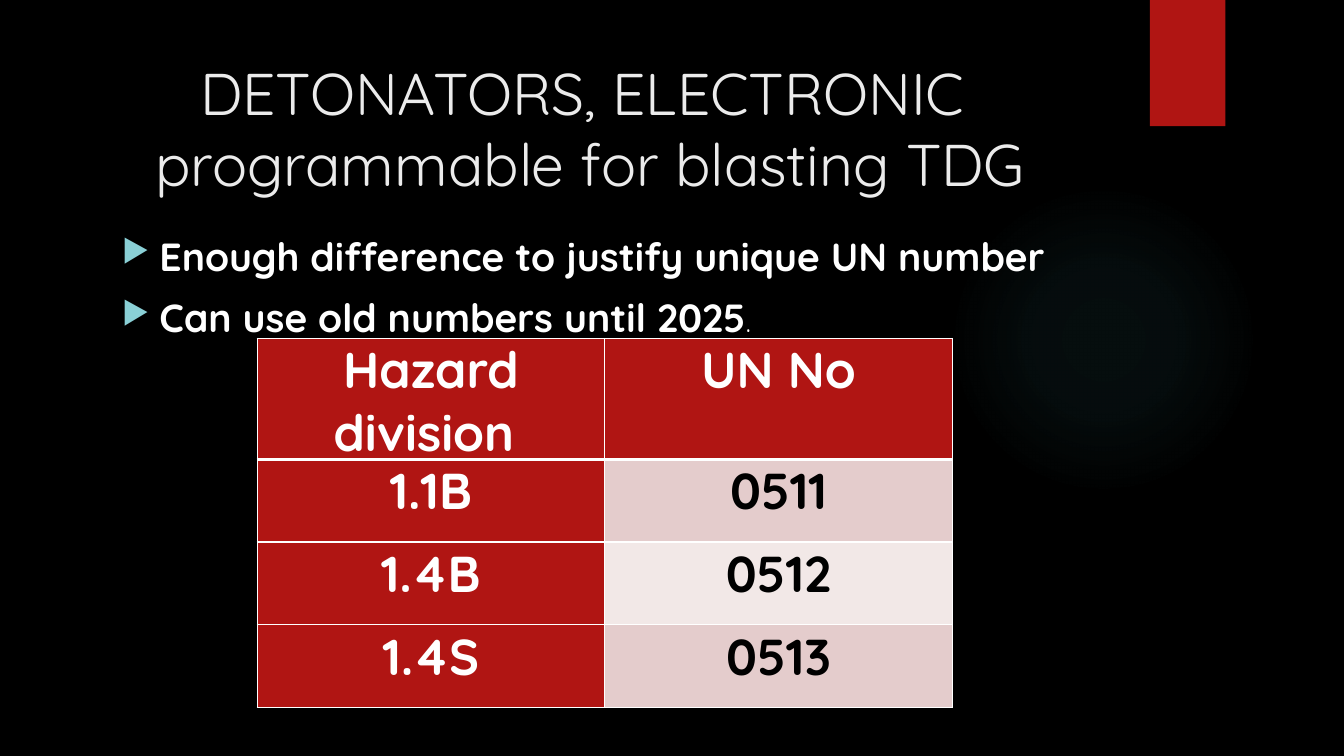
"""Build the slide on UN numbers for electronic detonators."""
from dataclasses import dataclass
from typing import NamedTuple

from lxml import etree
from pptx import Presentation
from pptx.dml.color import RGBColor
from pptx.enum.shapes import MSO_SHAPE
from pptx.enum.text import MSO_ANCHOR, PP_ALIGN
from pptx.util import Cm, Pt

OVAL, RECT = MSO_SHAPE.OVAL, MSO_SHAPE.RECTANGLE
LEFT, CENTER = PP_ALIGN.LEFT, PP_ALIGN.CENTER
TOP, MIDDLE = MSO_ANCHOR.TOP, MSO_ANCHOR.MIDDLE
NS = "http://schemas.openxmlformats.org/drawingml/2006/main"


@dataclass(frozen=True)
class Theme:
    font: str = "Quicksand"
    black: str = "000000"
    white: str = "FFFFFF"
    pale: str = "EBEBEB"
    red: str = "B01513"
    teal: str = "50B9C1"
    mark: str = "8AD0D6"
    bands: tuple = ("E4CCCC", "F2E8E7")
    title: int = 42
    cell: int = 36
    body: int = 28
    small: int = 20


THEME = Theme()


class Box(NamedTuple):
    left: float
    top: float
    width: float
    height: float

    def place(self) -> list:
        return [Cm(value) for value in self]


class Piece(NamedTuple):
    text: str
    size: int
    color: str = THEME.white
    bold: bool = True


class Stop(NamedTuple):
    place: int
    alpha: int


GLOW = (Stop(0, 7), Stop(36, 6), Stop(69, 0))
TITLE = ("DETONATORS, ELECTRONIC ", "programmable for blasting TDG")
POINTS = (
    (Piece("Enough difference to justify unique UN number", THEME.body),),
    (Piece("Can use old numbers until 2025", THEME.body),
     Piece(".", THEME.small, bold=False)),
)
ROWS = (("Hazard division ", "UN No"), ("1.1B", "0511"),
        ("1.4B", "0512"), ("1.4S", "0513"))


def add_xml(parent, text: str) -> None:
    parent.append(etree.fromstring(text.replace(" ", f' xmlns:a="{NS}" ', 1)))


def paint(fill, color: str) -> None:
    fill.solid()
    fill.fore_color.rgb = RGBColor.from_string(color)


def add_run(para, piece: Piece) -> None:
    run = para.add_run()
    run.text = piece.text
    font = run.font
    font.name, font.size, font.bold = THEME.font, Pt(piece.size), piece.bold
    font.color.rgb = RGBColor.from_string(piece.color)


def add_shape(slide, kind, box: Box, color: str):
    shape = slide.shapes.add_shape(kind, *box.place())
    shape.shadow.inherit = False
    shape.line.fill.background()
    paint(shape.fill, color)
    return shape


def add_glow(slide, box: Box) -> None:
    shape = add_shape(slide, OVAL, box, THEME.teal)
    stops = "".join(
        f'<a:gs pos="{stop.place * 1000}"><a:srgbClr val="{THEME.teal}">'
        f'<a:alpha val="{stop.alpha * 1000}"/></a:srgbClr></a:gs>'
        for stop in GLOW)
    solid = shape.fill._xPr.find(f"{{{NS}}}solidFill")
    solid.getparent().replace(solid, etree.fromstring(
        f'<a:gradFill xmlns:a="{NS}" rotWithShape="1"><a:gsLst>{stops}</a:gsLst>'
        '<a:path path="circle"><a:fillToRect l="50000" t="50000" r="50000" '
        'b="50000"/></a:path></a:gradFill>'))


def add_frame(slide, box: Box, anchor):
    frame = slide.shapes.add_textbox(*box.place()).text_frame
    frame.word_wrap = True
    frame.vertical_anchor = anchor
    return frame


def add_title(slide, box: Box) -> None:
    para = add_frame(slide, box, MIDDLE).paragraphs[0]
    para.alignment = CENTER
    for index, line in enumerate(TITLE):
        if index:
            para.add_line_break()
        add_run(para, Piece(line, THEME.title, THEME.pale, False))


def add_points(slide, box: Box) -> None:
    frame = add_frame(slide, box, TOP)
    for index, point in enumerate(POINTS):
        para = frame.add_paragraph() if index else frame.paragraphs[0]
        props = para._p.get_or_add_pPr()
        props.set("marL", str(Cm(0.95)))
        props.set("indent", str(-Cm(0.95)))
        add_xml(props, f'<a:buClr ><a:srgbClr val="{THEME.mark}"/></a:buClr>')
        add_xml(props, '<a:buSzPct val="80000"/>')
        add_xml(props, '<a:buChar char="▶"/>')
        para.alignment = LEFT
        para.space_before = Pt(10 if index else 0)
        for piece in point:
            add_run(para, piece)


def add_edge(cell, side: str, width: int) -> None:
    add_xml(cell._tc.get_or_add_tcPr(),
            f'<a:ln{side} w="{Pt(width)}"><a:solidFill>'
            f'<a:srgbClr val="{THEME.white}"/></a:solidFill></a:ln{side}>')


def fill_cell(cell, text: str, row: int, col: int) -> None:
    plain = row > 0 and col > 0
    cell.margin_left = cell.margin_right = Cm(0.18)
    cell.margin_top = cell.margin_bottom = 0
    cell.vertical_anchor = TOP
    for side in "LRTB":
        thick = (row, side) in ((0, "B"), (1, "T"))
        add_edge(cell, side, 3 if thick else 1)
    paint(cell.fill, THEME.bands[(row - 1) % 2] if plain else THEME.red)
    para = cell.text_frame.paragraphs[0]
    para.alignment = CENTER
    add_run(para, Piece(text, THEME.cell, THEME.black if plain else THEME.white))


def add_grid(slide, box: Box) -> None:
    table = slide.shapes.add_table(len(ROWS), len(ROWS[0]), *box.place()).table
    table.horz_banding = False
    for row, texts in enumerate(ROWS):
        table.rows[row].height = Cm(box.height / len(ROWS))
        for col, text in enumerate(texts):
            fill_cell(table.cell(row, col), text, row, col)


def main() -> None:
    deck = Presentation()
    deck.slide_width, deck.slide_height = Cm(33.87), Cm(19.05)
    slide = deck.slides.add_slide(deck.slide_layouts[6])
    paint(slide.background.fill, THEME.black)
    add_glow(slide, Box(23.9, 4.65, 7.82, 7.82))
    add_shape(slide, RECT, Box(28.98, 0, 1.9, 3.18), THEME.red)
    add_title(slide, Box(1.8, 1.27, 26.14, 3.89))
    add_points(slide, Box(2.82, 5.72, 25.1, 12.95))
    add_grid(slide, Box(6.48, 8.53, 17.52, 8.32))
    deck.save("out.pptx")


if __name__ == "__main__":
    main()
